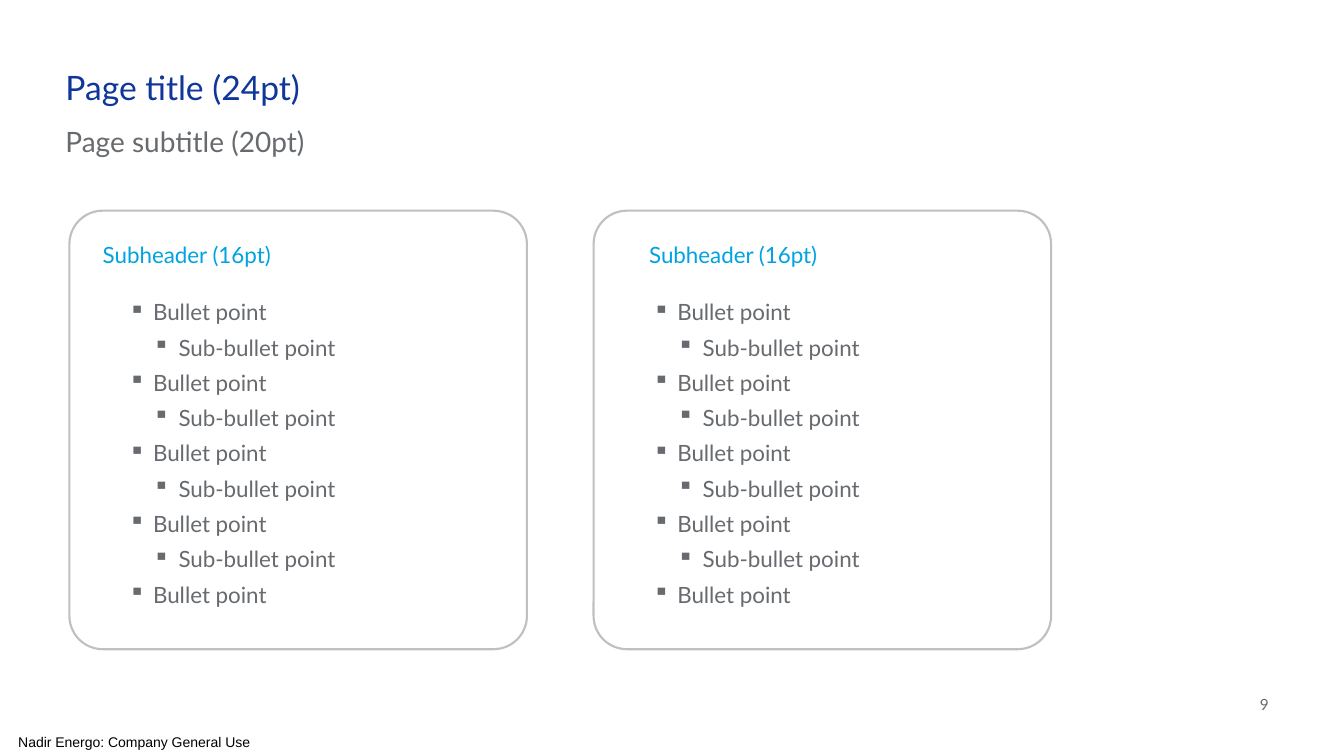
from lxml.etree import SubElement
from pptx import Presentation
from pptx.dml.color import RGBColor
from pptx.enum.shapes import MSO_SHAPE as Shape
from pptx.enum.text import MSO_ANCHOR as Anchor, MSO_AUTO_SIZE as AutoSize, PP_ALIGN as Align
from pptx.oxml.ns import qn
from pptx.util import Cm, Pt

NAVY, CYAN, GREY, SILVER, BLACK = "0F3699", "00A3E0", "676A6E", "C0BFC1", "000000"
BULLET_INDENTS = {1: (1.27, 0.61), 2: (1.91, 0.64)}
CARD_PITCH = 13.21


def color(value):
    return RGBColor.from_string(value)


class PageBuilder:
    """Draws styled elements on the current slide."""

    def __init__(self, deck, font="Lato"):
        self.font = font
        self.page = deck.slides.add_slide(deck.slide_layouts[5])

    def fill_frame(self, box, text, size, ink, font=None, before=6,
                   align=Align.LEFT, anchor=Anchor.TOP, inset=0.13):
        frame = box.text_frame
        frame.word_wrap = True
        frame.auto_size = AutoSize.NONE
        frame.vertical_anchor = anchor
        frame.margin_left = frame.margin_right = 0
        frame.margin_top = frame.margin_bottom = Cm(inset)
        frame.text = text
        for para in frame.paragraphs:
            para.alignment = align
            para.space_before = Pt(before)
            para.font.name = font or self.font
            para.font.size = Pt(size)
            para.font.color.rgb = color(ink)
        return frame

    def title(self, text, left, top, width, height):
        box = self.page.shapes.title
        box.left, box.top, box.width, box.height = map(Cm, (left, top, width, height))
        self.fill_frame(box, text, 24, NAVY)

    def text(self, text, left, top, width, height, size, ink, **style):
        box = self.page.shapes.add_textbox(*map(Cm, (left, top, width, height)))
        return self.fill_frame(box, text, size, ink, **style)

    def bullets(self, items, left, top, width, height):
        lines = "\n".join(text for text, level in items)
        frame = self.text(lines, left, top, width, height, 16, GREY)
        for para, (text, level) in zip(frame.paragraphs, items):
            para.level = level
            margin, hanging = BULLET_INDENTS[level]
            properties = para._p.get_or_add_pPr()
            properties.set("marL", str(Cm(margin)))
            properties.set("indent", str(-Cm(hanging)))
            mark = SubElement(properties, qn("a:buChar"), char="▪")
            properties.find(qn("a:defRPr")).addprevious(mark)

    def card(self, left, top, width, height):
        box = self.page.shapes.add_shape(
            Shape.ROUNDED_RECTANGLE, *map(Cm, (left, top, width, height)))
        box.adjustments[0] = 0.076
        box.shadow.inherit = False
        box.fill.background()
        box.line.color.rgb = color(SILVER)
        box.line.width = Pt(1.5)


def main():
    deck = Presentation()
    deck.slide_width, deck.slide_height = Cm(33.87), Cm(19.05)
    builder = PageBuilder(deck)

    builder.title("Page title (24pt)", 1.65, 1.55, 12.57, 1.45)
    builder.text("Page subtitle (20pt)", 1.65, 3.02, 12.57, 1.45, 20, GREY)

    items = ([("Bullet point", 1), ("Sub-bullet point", 2)] * 5)[:-1]
    columns = [(2.59, 15.04, 9.8), (16.36, 13.54, 7.87)]
    for number, (header_left, header_width, list_width) in enumerate(columns):
        shift = number * CARD_PITCH
        builder.text("Subheader (16pt)", header_left, 5.94, header_width, 1.45, 16, CYAN)
        builder.bullets(items, 2.59 + shift, 7.39, list_width, 8.66)
        builder.card(1.75 + shift, 5.31, 11.53, 11.05)

    builder.text("9", 30.99, 17.42, 0.99, 0.64, 11, GREY,
                 before=0, align=Align.RIGHT, anchor=Anchor.MIDDLE)
    builder.text("Nadir Energo: Company General Use", 0.46, 18.36, 6.45, 0.69, 10, BLACK,
                 font="Arial", before=0, anchor=Anchor.MIDDLE, inset=0)
    deck.save("out.pptx")


if __name__ == "__main__":
    main()
